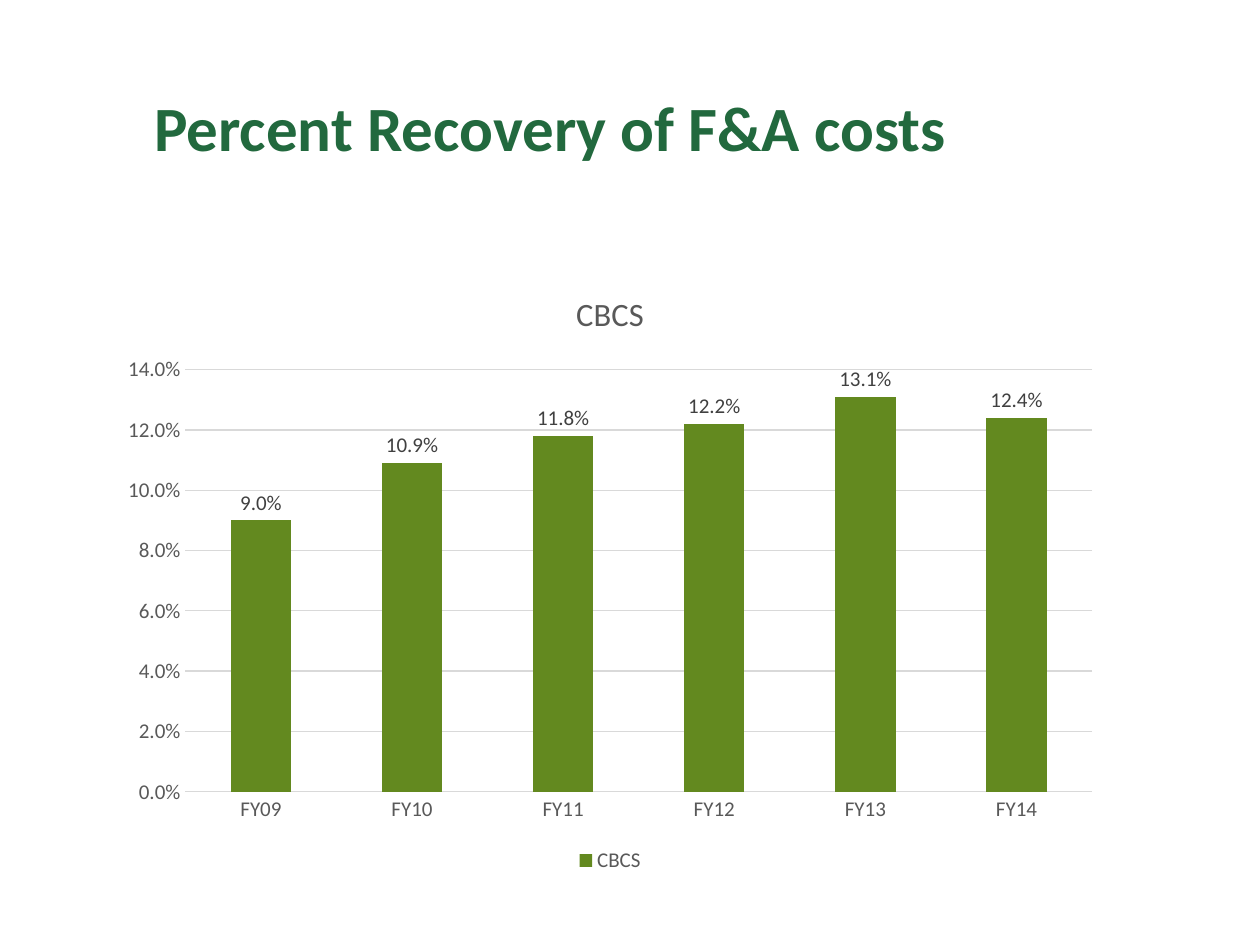
from pptx import Presentation
from pptx.chart.data import CategoryChartData
from pptx.dml.color import RGBColor
from pptx.enum.chart import (XL_CHART_TYPE, XL_LABEL_POSITION,
                             XL_LEGEND_POSITION, XL_TICK_MARK)
from pptx.enum.text import MSO_ANCHOR, MSO_AUTO_SIZE, PP_ALIGN
from pptx.util import Cm, Pt

COLUMNS = XL_CHART_TYPE.COLUMN_CLUSTERED
OUTSIDE_END = XL_LABEL_POSITION.OUTSIDE_END
LEGEND_BOTTOM = XL_LEGEND_POSITION.BOTTOM
NO_TICK = XL_TICK_MARK.NONE
MIDDLE = MSO_ANCHOR.MIDDLE
NO_AUTOFIT = MSO_AUTO_SIZE.NONE
CENTER = PP_ALIGN.CENTER

DARK_GREEN = RGBColor(0x22, 0x69, 0x3E)
LEAF_GREEN = RGBColor(0x63, 0x89, 0x1F)
AXIS_GRAY = RGBColor(0x59, 0x59, 0x59)
LABEL_GRAY = RGBColor(0x40, 0x40, 0x40)
GRID_GRAY = RGBColor(0xD9, 0xD9, 0xD9)

TITLE_ONLY = 5
PERCENT = "0.0%"
RECOVERY = {"FY09": 0.09, "FY10": 0.109, "FY11": 0.118,
            "FY12": 0.122, "FY13": 0.131, "FY14": 0.124}


def format_font(font, size, color, bold=False):
    font.name = "Calibri"
    font.size = Pt(size)
    font.bold = bold
    font.color.rgb = color


def write_text(frame, text, align=CENTER, **font_format):
    para = frame.paragraphs[0]
    para.alignment = align
    span = para.add_run()
    span.text = text
    format_font(span.font, **font_format)


class RecoverySlide:
    """Holds the chart text style and the current slide."""

    def __init__(self, deck):
        self.page = deck.slides.add_slide(deck.slide_layouts[TITLE_ONLY])
        self.small = {"size": 12, "color": AXIS_GRAY}

    def add_title(self, text, left, top, width, height):
        box = self.page.shapes.title
        box.left, box.top, box.width, box.height = left, top, width, height
        frame = box.text_frame
        frame.word_wrap = True
        frame.auto_size = NO_AUTOFIT
        frame.vertical_anchor = MIDDLE
        # The larger insets shift the centred line right and up
        frame.margin_left = Cm(1.27)
        frame.margin_bottom = Cm(0.82)
        write_text(frame, text, size=36, color=DARK_GREEN, bold=True)

    def add_column_chart(self, name, values, left, top, width, height):
        data = CategoryChartData(number_format=PERCENT)
        data.categories = list(values)
        data.add_series(name, list(values.values()))
        chart = self.page.shapes.add_chart(
            COLUMNS, left, top, width, height, data).chart
        format_font(chart.font, **self.small)

        # Chart title and legend
        chart.has_title = True
        write_text(chart.chart_title.text_frame, name,
                   size=18.6, color=AXIS_GRAY)
        chart.chart_title.include_in_layout = False
        chart.has_legend = True
        chart.legend.position = LEGEND_BOTTOM
        chart.legend.include_in_layout = False
        format_font(chart.legend.font, **self.small)

        # Axes
        for axis in (chart.category_axis, chart.value_axis):
            axis.major_tick_mark = axis.minor_tick_mark = NO_TICK
            axis.format.line.fill.background()
            format_font(axis.tick_labels.font, **self.small)
        axis = chart.value_axis
        axis.minimum_scale, axis.maximum_scale = 0, 0.14
        axis.major_unit = 0.02
        axis.tick_labels.number_format = PERCENT
        axis.tick_labels.number_format_is_linked = False
        grid_line = axis.major_gridlines.format.line
        grid_line.color.rgb = GRID_GRAY
        grid_line.width = Pt(0.75)

        # Columns and their labels
        plot = chart.plots[0]
        plot.gap_width = 150
        plot.vary_by_categories = False
        series = plot.series[0]
        series.format.fill.solid()
        series.format.fill.fore_color.rgb = LEAF_GREEN
        labels = series.data_labels
        labels.show_value = True
        labels.position = OUTSIDE_END
        labels.number_format = PERCENT
        labels.number_format_is_linked = False
        format_font(labels.font, size=12, color=LABEL_GRAY)


def main():
    deck = Presentation()
    deck.slide_width, deck.slide_height = Cm(25.4), Cm(19.05)
    slide = RecoverySlide(deck)
    slide.add_title("Percent Recovery of F&A costs",
                    Cm(0.94), Cm(1.3), Cm(19.28), Cm(3.18))
    slide.add_column_chart("CBCS", RECOVERY,
                           Cm(2.18), Cm(5.36), Cm(20.24), Cm(12.34))
    deck.save("out.pptx")


if __name__ == "__main__":
    main()
